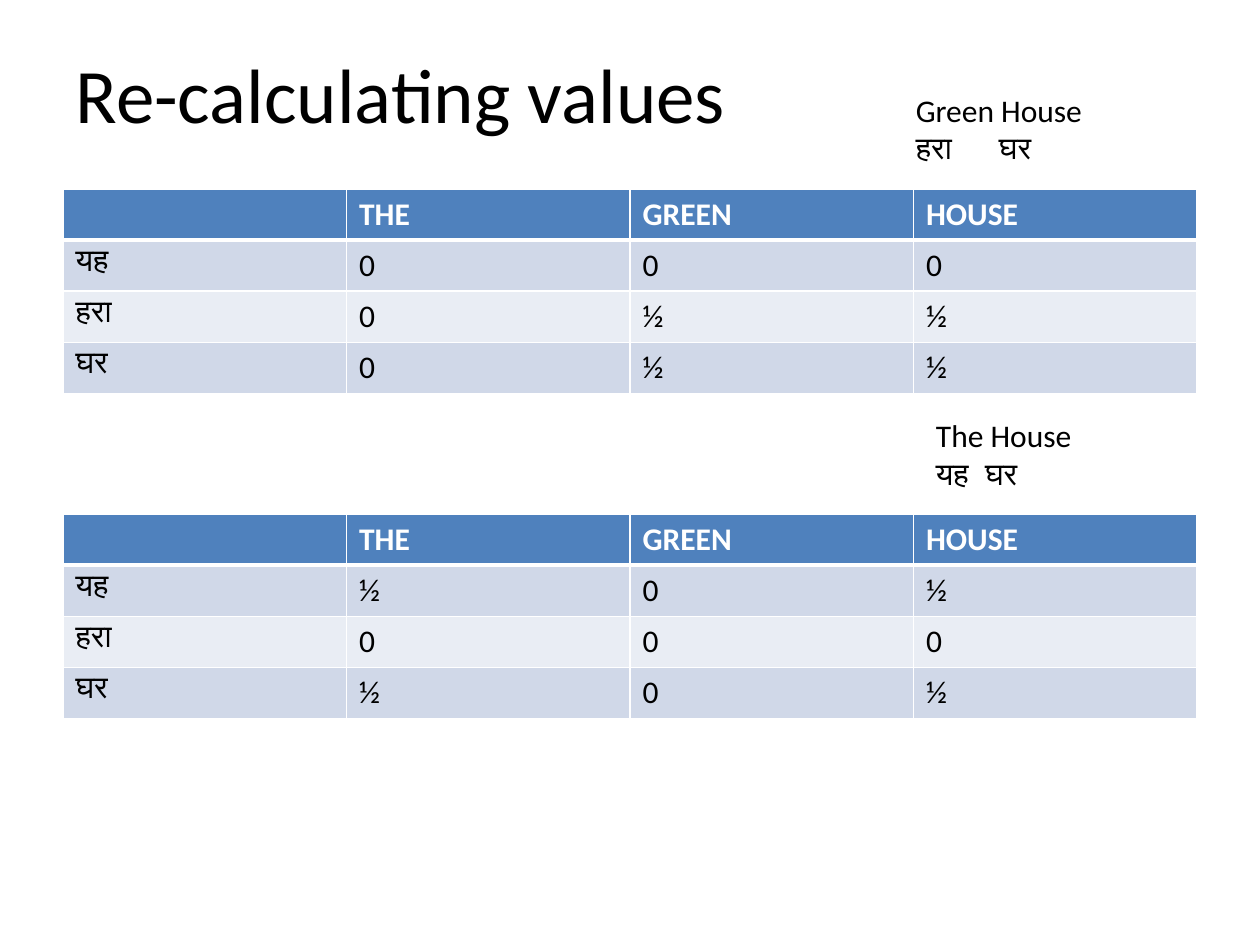
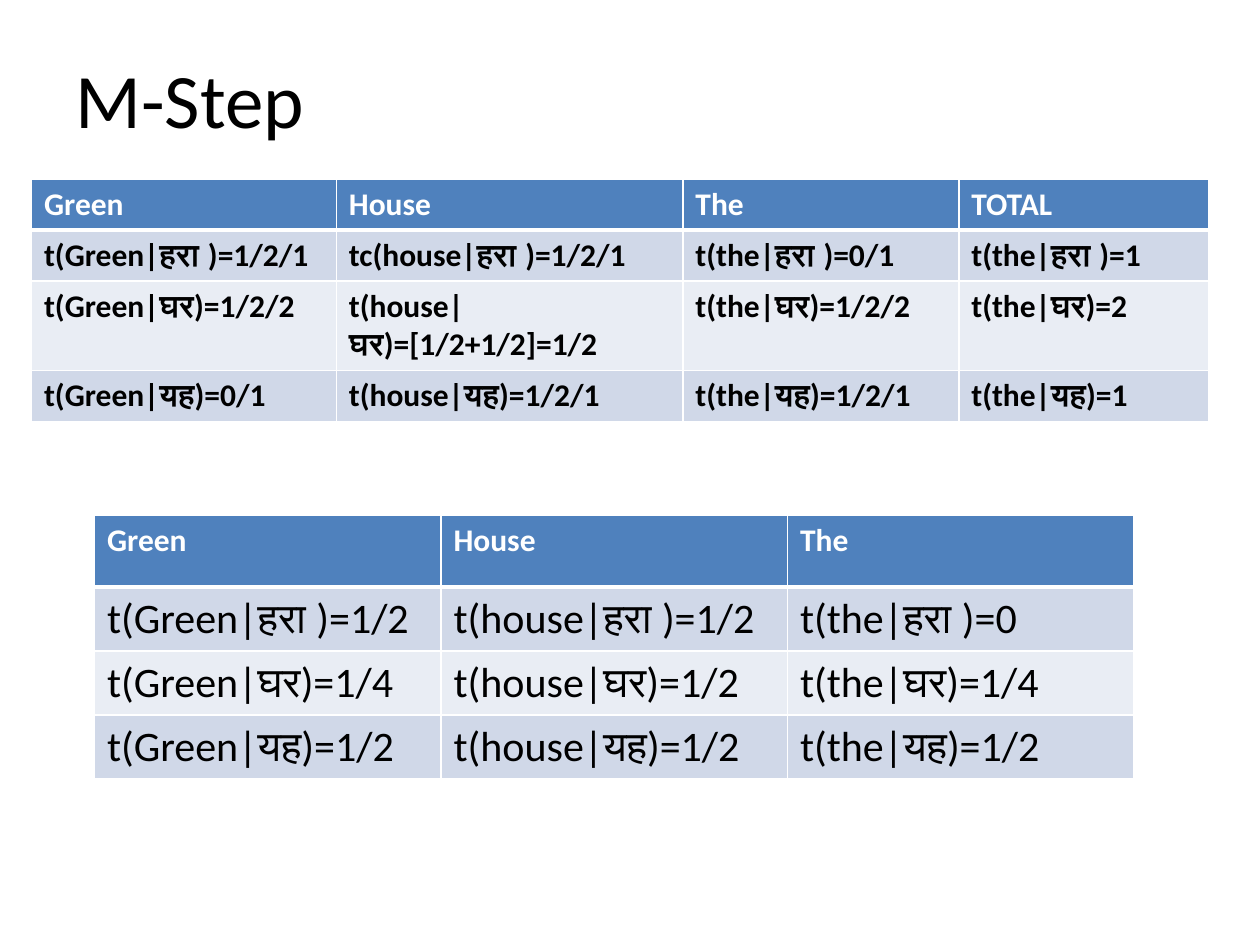
from lxml.etree import SubElement
from pptx import Presentation
from pptx.dml.color import RGBColor
from pptx.enum.text import MSO_ANCHOR as Anchor, PP_ALIGN as Align
from pptx.oxml.ns import qn
from pptx.util import Inches, Pt

# Shared look
BLACK = RGBColor(0x00, 0x00, 0x00)
WHITE = RGBColor(0xFF, 0xFF, 0xFF)
HEADER_BLUE = RGBColor(0x4F, 0x81, 0xBD)
BANDS = (RGBColor(0xD0, 0xD8, 0xE8), RGBColor(0xE9, 0xED, 0xF4))
FONT = "Calibri"
TITLE_ONLY = 5
ROW_HEIGHT = 0.4

# Word alignment counts
WORDS = ("", "THE", "GREEN", "HOUSE")
GREEN_HOUSE_COUNTS = (
    WORDS,
    ("यह", "0", "0", "0"),
    ("हरा", "0", "½", "½"),
    ("घर", "0", "½", "½"),
)
THE_HOUSE_COUNTS = (
    WORDS,
    ("यह", "½", "0", "½"),
    ("हरा", "0", "0", "0"),
    ("घर", "½", "0", "½"),
)

# Translation probabilities
NORMALISING = (
    ("Green", "House", "The", "TOTAL"),
    ("t(Green|हरा )=1/2/1", "tc(house|हरा )=1/2/1", "t(the|हरा )=0/1", "t(the|हरा )=1"),
    ("t(Green|घर)=1/2/2", "t(house|घर)=[1/2+1/2]=1/2", "t(the|घर)=1/2/2", "t(the|घर)=2"),
    ("t(Green|यह)=0/1", "t(house|यह)=1/2/1", "t(the|यह)=1/2/1", "t(the|यह)=1"),
)
PROBABILITIES = (
    ("Green", "House", "The"),
    ("t(Green|हरा )=1/2", "t(house|हरा )=1/2", "t(the|हरा )=0"),
    ("t(Green|घर)=1/4", "t(house|घर)=1/2", "t(the|घर)=1/4"),
    ("t(Green|यह)=1/2", "t(house|यह)=1/2", "t(the|यह)=1/2"),
)


def write(para, text, color=BLACK, **formats):
    span = para.add_run()
    span.text = text
    span.font.color.rgb = color
    for name, value in {"name": FONT, "size": Pt(18), **formats}.items():
        setattr(span.font, name, value)


def add_page(deck, title, height):
    page = deck.slides.add_slide(deck.slide_layouts[TITLE_ONLY])
    box = page.shapes.title
    place = {"left": 0.5, "top": 0.3, "width": 9, "height": height}
    for name, value in place.items():
        setattr(box, name, Inches(value))
    box.text_frame.vertical_anchor = Anchor.MIDDLE
    para = box.text_frame.paragraphs[0]
    para.alignment = Align.LEFT
    write(para, title, size=Pt(44))
    return page


def add_borders(cell, top, bottom):
    properties = cell._tc.get_or_add_tcPr()
    for side, points in {"L": 1, "R": 1, "T": top, "B": bottom}.items():
        line = SubElement(properties, qn(f"a:ln{side}"), w=str(Pt(points)))
        fill = SubElement(line, qn("a:solidFill"))
        SubElement(fill, qn("a:srgbClr"), val=str(WHITE))


def add_grid(page, rows, left, top, widths, header_height=ROW_HEIGHT, **body_formats):
    heights = [header_height] + [ROW_HEIGHT] * (len(rows) - 1)
    table = page.shapes.add_table(
        len(rows), len(widths), Inches(left), Inches(top),
        Inches(sum(widths)), Inches(sum(heights))).table
    for column, width in zip(table.columns, widths):
        column.width = Inches(width)
    for index, (texts, height) in enumerate(zip(rows, heights)):
        table.rows[index].height = Inches(height)
        is_header = index == 0
        formats = {"color": WHITE, "bold": True} if is_header else body_formats
        for position, text in enumerate(texts):
            cell = table.cell(index, position)
            # The rule under the header is thicker
            add_borders(cell, 3 if index == 1 else 1, 3 if is_header else 1)
            cell.fill.solid()
            cell.fill.fore_color.rgb = HEADER_BLUE if is_header else BANDS[(index - 1) % 2]
            if text:
                write(cell.text_frame.paragraphs[0], text, **formats)


def add_word_pair(page, left, top, width, english, hindi, tab):
    """English words above their Hindi words, which a tab stop sets apart."""
    box = page.shapes.add_textbox(Inches(left), Inches(top), Inches(width), Inches(0.71))
    frame = box.text_frame
    frame.word_wrap = True
    write(frame.paragraphs[0], english)
    para = frame.add_paragraph()
    stops = SubElement(para._p.get_or_add_pPr(), qn("a:tabLst"))
    SubElement(stops, qn("a:tab"), pos=str(Inches(tab)), algn="l")
    write(para, "\t".join(hindi))


def main():
    deck = Presentation()
    deck.slide_width, deck.slide_height = Inches(10), Inches(7.5)

    # Counts for each sentence pair
    page = add_page(deck, "Re-calculating values", 0.87)
    for rows, top in ((GREEN_HOUSE_COUNTS, 1.5), (THE_HOUSE_COUNTS, 4.08)):
        add_grid(page, rows, 0.5, top, [2.25] * 4, bold=False)
    add_word_pair(page, 7.17, 0.67, 1.92, "Green House", ("हरा", "घर"), 0.66)
    add_word_pair(page, 7.33, 3.25, 1.29, "The House", ("यह", "घर"), 0.39)

    # Normalised probabilities
    page = add_page(deck, "M-Step", 0.95)
    add_grid(page, PROBABILITIES, 0.75, 4.09, [2.75] * 3, 0.57, size=Pt(24), bold=False)
    add_grid(page, NORMALISING, 0.25, 1.42, [2.42, 2.75, 2.19, 1.98], bold=True)

    deck.save("out.pptx")


if __name__ == "__main__":
    main()
